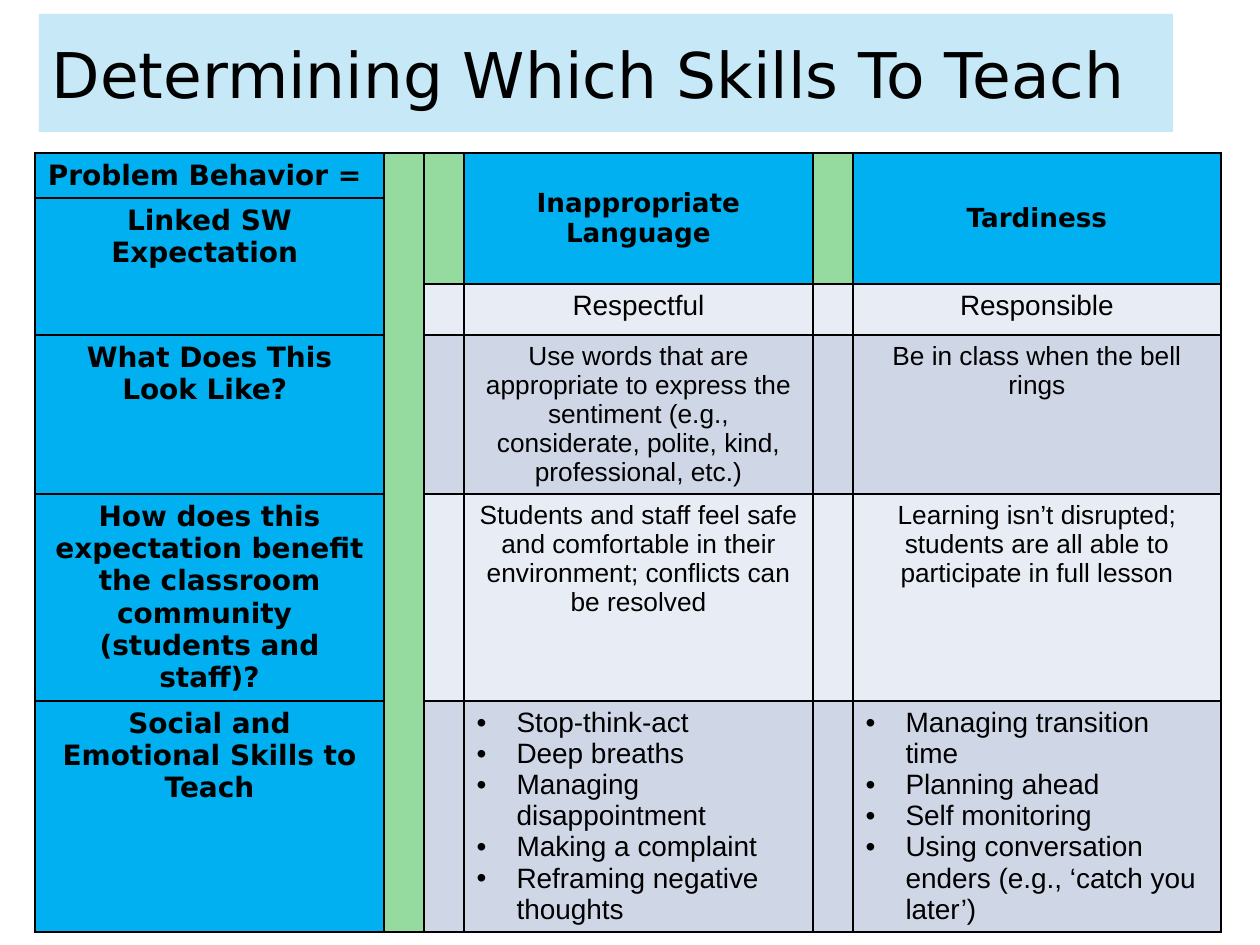
from dataclasses import dataclass

import lxml.etree
import pptx
import pptx.dml.color
import pptx.enum.text
import pptx.oxml
import pptx.oxml.ns
import pptx.table
import pptx.util

PX_PER_INCH = 126
ALIGN = pptx.enum.text.PP_ALIGN
ANCHOR = pptx.enum.text.MSO_ANCHOR


@dataclass(frozen=True)
class Theme:
    ink: str = "000000"
    banner: str = "A9DCF2"
    heading: str = "00B0F0"
    divider: str = "95DA9F"
    light_band: str = "E8ECF4"
    dark_band: str = "CFD7E7"
    heading_font: str = "DejaVu Sans"
    body_font: str = "Arial"
    title_size: int = 36
    large: int = 16
    small: int = 15


THEME = Theme()


@dataclass(frozen=True)
class Entry:
    row: int
    column: int
    lines: tuple[str, ...]
    size: int = THEME.large
    bold: bool = False
    middle: bool = False
    bulleted: bool = False


COLUMN_WIDTHS = (349, 40, 40, 349, 40, 368)
ROW_HEIGHTS = (45, 86, 50, 159, 207, 231)
LABEL, DIVIDER, LANGUAGE, TARDINESS = 0, 1, 3, 5
MERGES = [((0, DIVIDER), (5, DIVIDER)), ((1, LABEL), (2, LABEL))]
MERGES += [((0, column), (1, column)) for column in range(2, 6)]

ENTRIES = (
    Entry(0, LABEL, ("Problem Behavior = ",), bold=True, middle=True),
    Entry(1, LABEL, ("Linked SW Expectation ",), bold=True),
    Entry(3, LABEL, ("What Does This Look Like? ",), bold=True),
    Entry(4, LABEL, ("How does this expectation benefit the classroom community ",
                     "(students and staff)?"), bold=True),
    Entry(5, LABEL, ("Social and Emotional Skills to Teach",), bold=True),
    Entry(0, LANGUAGE, ("Inappropriate Language",), THEME.small, bold=True, middle=True),
    Entry(2, LANGUAGE, ("Respectful",)),
    Entry(3, LANGUAGE, ("Use words that are appropriate to express the sentiment "
                        "(e.g., considerate, polite, kind, professional, etc.)",), THEME.small),
    Entry(4, LANGUAGE, ("Students and staff feel safe and comfortable in their "
                        "environment; conflicts can be resolved",), THEME.small),
    Entry(5, LANGUAGE, ("Stop-think-act", "Deep breaths", "Managing disappointment",
                        "Making a complaint", "Reframing negative thoughts"), bulleted=True),
    Entry(0, TARDINESS, ("Tardiness",), THEME.small, bold=True, middle=True),
    Entry(2, TARDINESS, ("Responsible",)),
    Entry(3, TARDINESS, ("Be in class when the bell rings",), THEME.small),
    Entry(4, TARDINESS, ("Learning isn’t disrupted; students are all able to "
                         "participate in full lesson",), THEME.small),
    Entry(5, TARDINESS, ("Managing transition time", "Planning ahead", "Self monitoring",
                         "Using conversation enders (e.g., ‘catch you later’)"), bulleted=True),
)


def px(length: int) -> pptx.util.Emu:
    return pptx.util.Emu(round(length * 914400 / PX_PER_INCH))


def rgb(color: str) -> pptx.dml.color.RGBColor:
    return pptx.dml.color.RGBColor.from_string(color)


def set_font(paragraph, name: str, size: int, bold: bool = False) -> None:
    font = paragraph.font
    font.name, font.size, font.bold = name, pptx.util.Pt(size), bold
    font.color.rgb = rgb(THEME.ink)


def add_bullet(paragraph) -> None:
    properties = paragraph._p.get_or_add_pPr()
    properties.set("marL", str(px(40)))
    properties.set("indent", str(-px(40)))
    for element in (f'<a:buClr {pptx.oxml.ns.nsdecls("a")}><a:srgbClr val="{THEME.ink}"/></a:buClr>',
                    f'<a:buFont {pptx.oxml.ns.nsdecls("a")} typeface="Arial"/>',
                    f'<a:buChar {pptx.oxml.ns.nsdecls("a")} char="•"/>'):
        properties.append(pptx.oxml.parse_xml(element))


def add_borders(cell: pptx.table._Cell) -> None:
    properties = cell._tc.get_or_add_tcPr()
    for position, side in enumerate(("lnL", "lnR", "lnT", "lnB")):
        properties.insert(position, pptx.oxml.parse_xml(
            f'<a:{side} {pptx.oxml.ns.nsdecls("a")} w="{pptx.util.Pt(1)}"><a:solidFill>'
            f'<a:srgbClr val="{THEME.ink}"/></a:solidFill></a:{side}>'))


def cell_color(row: int, column: int) -> str:
    if column == LABEL:
        return THEME.heading
    if column == DIVIDER:
        return THEME.divider
    if row < 2:
        return THEME.heading if column in (LANGUAGE, TARDINESS) else THEME.divider
    return THEME.dark_band if row % 2 else THEME.light_band


def write_entry(table: pptx.table.Table, entry: Entry) -> None:
    cell = table.cell(entry.row, entry.column)
    cell.vertical_anchor = ANCHOR.MIDDLE if entry.middle else ANCHOR.TOP
    cell.text = "\n".join(entry.lines)
    for paragraph in cell.text_frame.paragraphs:
        if entry.bulleted:
            add_bullet(paragraph)
        else:
            paragraph.alignment = ALIGN.CENTER
        name = THEME.heading_font if entry.bold else THEME.body_font
        set_font(paragraph, name, entry.size, entry.bold)


def add_title(slide) -> None:
    title = slide.shapes.title
    title.left, title.top, title.width, title.height = px(39), px(14), px(1134), px(118)
    title.fill.solid()
    title.fill.fore_color.rgb = rgb(THEME.banner)
    banner_color = title.fill._xPr.find(".//" + pptx.oxml.ns.qn("a:srgbClr"))
    lxml.etree.SubElement(banner_color, pptx.oxml.ns.qn("a:alpha"), val="65000")
    frame = title.text_frame
    frame.text = "Determining Which Skills To Teach"
    frame.word_wrap = True
    frame.auto_size = pptx.enum.text.MSO_AUTO_SIZE.NONE
    frame.vertical_anchor = ANCHOR.MIDDLE
    frame.paragraphs[0].alignment = ALIGN.LEFT
    set_font(frame.paragraphs[0], THEME.heading_font, THEME.title_size)


def add_skills_table(slide) -> None:
    table = slide.shapes.add_table(
        len(ROW_HEIGHTS), len(COLUMN_WIDTHS), px(35), px(153),
        px(sum(COLUMN_WIDTHS)), px(sum(ROW_HEIGHTS))).table
    table.first_row = table.horz_banding = False
    for column, width in zip(table.columns, COLUMN_WIDTHS):
        column.width = px(width)
    for row, height in zip(table.rows, ROW_HEIGHTS):
        row.height = px(height)
    for row in range(len(ROW_HEIGHTS)):
        for column in range(len(COLUMN_WIDTHS)):
            cell = table.cell(row, column)
            cell.fill.solid()
            cell.fill.fore_color.rgb = rgb(cell_color(row, column))
            add_borders(cell)
    for first, last in MERGES:
        table.cell(*first).merge(table.cell(*last))
    for entry in ENTRIES:
        write_entry(table, entry)


def main() -> None:
    presentation = pptx.Presentation()
    presentation.slide_width, presentation.slide_height = px(1260), px(945)
    slide = presentation.slides.add_slide(presentation.slide_layouts[5])
    add_skills_table(slide)
    add_title(slide)
    presentation.save("out.pptx")


if __name__ == "__main__":
    main()
